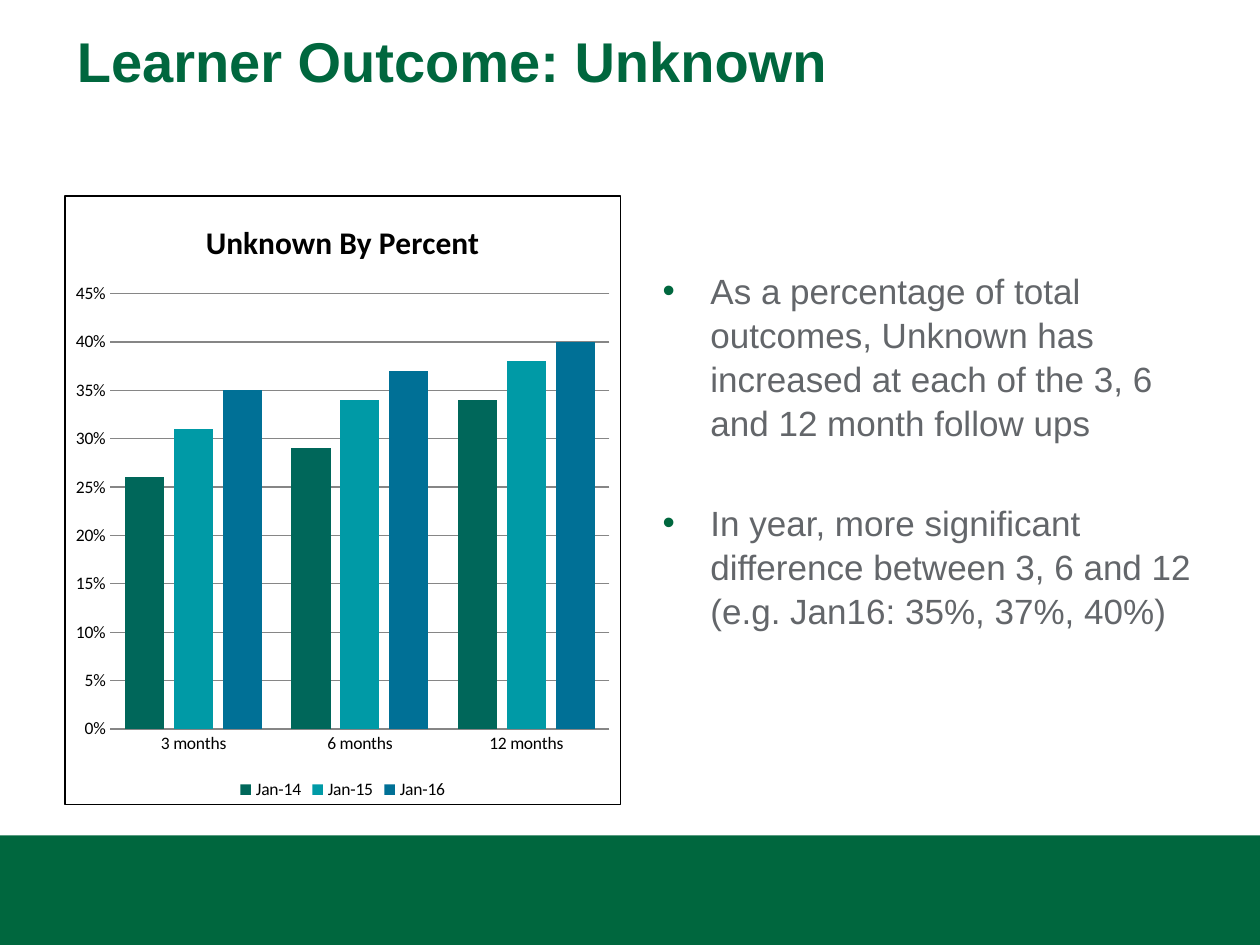
import pptx
import pptx.chart.data
import pptx.dml.color
import pptx.enum.chart
import pptx.enum.shapes
import pptx.enum.text
import pptx.oxml
import pptx.oxml.ns
import pptx.util
from pptx.util import Inches

RGBColor = pptx.dml.color.RGBColor
GREEN = RGBColor(0x00, 0x67, 0x3E)
TEXT_GRAY = RGBColor(0x63, 0x66, 0x6A)
GRID_GRAY = RGBColor(0x86, 0x86, 0x86)
BLACK = RGBColor(0x00, 0x00, 0x00)

MONTHS = ["3 months", "6 months", "12 months"]
OUTCOMES = [
    ("Jan-14", (0.26, 0.29, 0.34), RGBColor(0x00, 0x67, 0x5A)),
    ("Jan-15", (0.31, 0.34, 0.38), RGBColor(0x00, 0x9A, 0xA6)),
    ("Jan-16", (0.35, 0.37, 0.40), RGBColor(0x00, 0x70, 0x96)),
]
FINDINGS = [
    "As a percentage of total outcomes, Unknown has increased at each of the 3, 6 and 12 month follow ups",
    "In year, more significant difference between 3, 6 and 12 (e.g. Jan16: 35%, 37%, 40%)",
]


def set_format(target, values):
    for name, value in values.items():
        setattr(target, name, value)


def set_font(font, name, size, color, bold=False):
    set_format(font, {"name": name, "size": pptx.util.Pt(size), "bold": bold})
    font.color.rgb = color


def set_line(line, color):
    line.color.rgb = color
    line.width = pptx.util.Pt(0.75)


def add_band(slide):
    band = slide.shapes.add_shape(
        pptx.enum.shapes.MSO_SHAPE.RECTANGLE,
        Inches(0), Inches(6.63), Inches(10), Inches(0.87))
    band.shadow.inherit = False
    band.fill.solid()
    band.fill.fore_color.rgb = GREEN
    band.line.fill.background()


def set_title(slide, text):
    title = slide.shapes.title
    set_format(title, {"left": Inches(0.51), "top": Inches(0.16),
                       "width": Inches(8.98), "height": Inches(1.31)})
    title.text_frame.text = text
    title.text_frame.vertical_anchor = pptx.enum.text.MSO_ANCHOR.TOP
    paragraph = title.text_frame.paragraphs[0]
    paragraph.alignment = pptx.enum.text.PP_ALIGN.LEFT
    set_font(paragraph.font, "Arial", 32, GREEN, bold=True)


def add_chart_border(chart):
    border = pptx.oxml.parse_xml(
        f'<c:spPr {pptx.oxml.ns.nsdecls("c", "a")}><a:noFill/><a:ln w="9525">'
        f'<a:solidFill><a:srgbClr val="{BLACK}"/></a:solidFill></a:ln></c:spPr>')
    chart.element.find(pptx.oxml.ns.qn("c:chart")).addnext(border)


def add_outcome_chart(slide):
    data = pptx.chart.data.CategoryChartData(number_format="0%")
    data.categories = MONTHS
    for name, values, _ in OUTCOMES:
        data.add_series(name, values)
    chart = slide.shapes.add_chart(
        pptx.enum.chart.XL_CHART_TYPE.COLUMN_CLUSTERED,
        Inches(0.51), Inches(1.55), Inches(4.42), Inches(4.84), data).chart
    set_font(chart.font, "Calibri", 10, BLACK)
    add_chart_border(chart)

    # Title and legend
    chart.has_title = True
    chart.chart_title.text_frame.text = "Unknown By Percent"
    chart.chart_title.include_in_layout = False
    set_font(chart.chart_title.text_frame.paragraphs[0].font,
             "Calibri", 18, BLACK, bold=True)
    chart.has_legend = True
    set_format(chart.legend, {
        "position": pptx.enum.chart.XL_LEGEND_POSITION.BOTTOM,
        "include_in_layout": False})

    # Axes
    for axis in (chart.category_axis, chart.value_axis):
        axis.major_tick_mark = pptx.enum.chart.XL_TICK_MARK.NONE
    set_line(chart.category_axis.format.line, GRID_GRAY)
    value_axis = chart.value_axis
    set_format(value_axis, {"minimum_scale": 0, "maximum_scale": 0.45,
                            "major_unit": 0.05, "has_major_gridlines": True})
    set_line(value_axis.major_gridlines.format.line, GRID_GRAY)
    value_axis.format.line.fill.background()
    set_format(value_axis.tick_labels, {"number_format": "0%",
                                        "number_format_is_linked": False})

    # Columns
    plot = chart.plots[0]
    set_format(plot, {"gap_width": 75, "overlap": -25, "vary_by_categories": False})
    for series, (_, _, color) in zip(plot.series, OUTCOMES):
        series.format.fill.solid()
        series.format.fill.fore_color.rgb = color


def add_bullet(paragraph):
    properties = paragraph._p.get_or_add_pPr()
    properties.set("marL", str(Inches(0.38)))
    properties.set("indent", str(-Inches(0.38)))
    namespace = pptx.oxml.ns.nsdecls("a")
    for xml in (f'<a:buClr {namespace}><a:srgbClr val="{GREEN}"/></a:buClr>',
                f'<a:buFont {namespace} typeface="Arial"/>',
                f'<a:buChar {namespace} char="•"/>'):
        properties.append(pptx.oxml.parse_xml(xml))


def add_findings(slide):
    frame = slide.shapes.add_textbox(
        Inches(5.16), Inches(2.07), Inches(4.42), Inches(4.32)).text_frame
    frame.word_wrap = True
    for index, text in enumerate(FINDINGS):
        paragraph = frame.add_paragraph() if index else frame.paragraphs[0]
        paragraph.text = text
        add_bullet(paragraph)
        paragraph.line_spacing = 1.05
        if index:
            paragraph.space_before = pptx.util.Pt(32)
        set_font(paragraph.font, "Arial", 20, TEXT_GRAY)


def main():
    presentation = pptx.Presentation()
    set_format(presentation, {"slide_width": Inches(10), "slide_height": Inches(7.5)})
    slide = presentation.slides.add_slide(presentation.slide_layouts[5])
    add_band(slide)
    set_title(slide, "Learner Outcome: Unknown")
    add_outcome_chart(slide)
    add_findings(slide)
    presentation.save("out.pptx")


if __name__ == "__main__":
    main()
